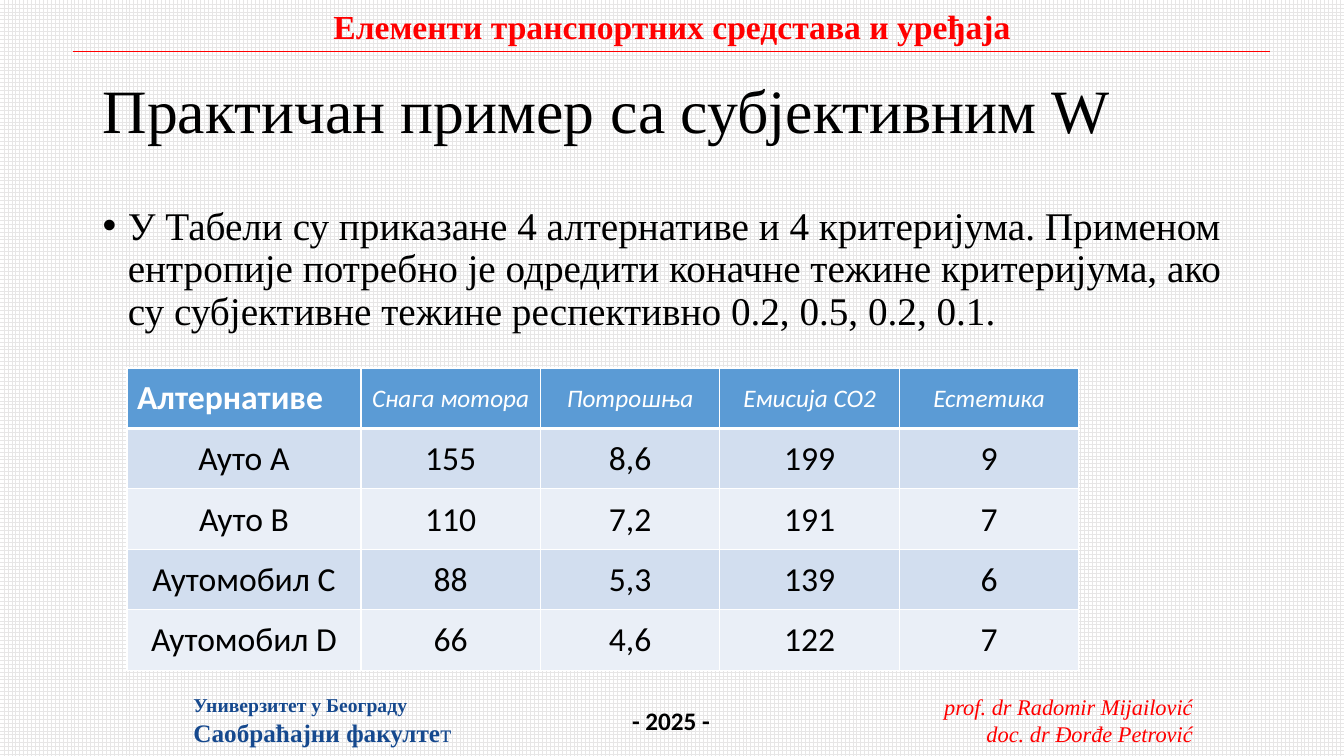
"""Build the slide on a practical weighting example with subjective W."""
from lxml import etree
from pptx import Presentation
from pptx.dml.color import RGBColor
from pptx.enum.dml import MSO_PATTERN
from pptx.enum.shapes import MSO_CONNECTOR
from pptx.enum.text import MSO_ANCHOR, PP_ALIGN
from pptx.oxml.ns import qn
from pptx.util import Inches, Pt

LEFT, CENTER, RIGHT = PP_ALIGN.LEFT, PP_ALIGN.CENTER, PP_ALIGN.RIGHT
TOP, MIDDLE = MSO_ANCHOR.TOP, MSO_ANCHOR.MIDDLE
GRID = MSO_PATTERN.LARGE_GRID
STRAIGHT = MSO_CONNECTOR.STRAIGHT
SERIF, SANS = "Times New Roman", "Calibri"
COLORS = {
    "red": "FF0000", "blue": "16498E", "black": "000000", "white": "FFFFFF",
    "grid": "E7E6E6", "header": "5B9BD5", "odd": "D2DEEF", "even": "EAEFF7",
}


def color(name):
    return RGBColor.from_string(COLORS[name])


def write(para, text, size=18, font=SERIF, ink="black", bold=False, italic=False, align=LEFT):
    para.alignment = align
    span = para.add_run()
    span.text = text
    span.font.size = Pt(size)
    span.font.name = font
    span.font.bold = bold
    span.font.italic = italic
    span.font.color.rgb = color(ink)


deck = Presentation()
deck.slide_width, deck.slide_height = Inches(13.33), Inches(7.5)
page = deck.slides.add_slide(deck.slide_layouts[6])
backdrop = page.background.fill
backdrop.patterned()
backdrop.pattern = GRID
backdrop.fore_color.rgb = color("grid")
backdrop.back_color.rgb = color("white")

rule = page.shapes.add_connector(STRAIGHT, Inches(0.72), Inches(0.51), Inches(12.6), Inches(0.51))
rule.line.color.rgb = color("red")
rule.line.width = Pt(0.5)
etree.SubElement(rule.element.spPr, qn("a:effectLst"))

author = dict(size=16, ink="red", italic=True, align=RIGHT)
school = dict(ink="blue", bold=True)
text_boxes = [
    ((9.22, 6.83, 2.71, 0.64), False, TOP, [
        [("prof. dr Radomir Mijailović", author)],
        [("doc. dr Đorđe Petrović", author)]]),
    ((3.17, 0.01, 6.99, 0.5), False, TOP, [
        [("Елементи транспортних средстава и уређаја",
          dict(size=24, ink="red", bold=True, align=CENTER))]]),
    ((6.17, 6.95, 0.98, 0.4), False, TOP, [[("- 2025 -", dict(font=SANS, bold=True))]]),
    ((1.82, 6.83, 2.79, 0.64), False, TOP, [
        [("Универзитет у Београду", dict(school, size=14))],
        [("Саобраћајни факулте", school), ("т", dict(ink="blue"))]]),
    ((0.92, 0.4, 11.5, 1.45), True, MIDDLE, [
        [("Практичан пример са субјективним W", dict(size=44))]]),
    ((0.92, 2, 11.5, 4.76), True, TOP, [
        [("У Табели су приказане 4 алтернативе и 4 критеријума. Применом ентропије "
          "потребно је одредити коначне тежине критеријума, ако су субјективне тежине "
          "респективно 0.2, 0.5, 0.2, 0.1.", dict(size=28))]]),
]
for place, wrap, anchor, paragraphs in text_boxes:
    box = page.shapes.add_textbox(*map(Inches, place))
    frame = box.text_frame
    frame.word_wrap = wrap
    frame.vertical_anchor = anchor
    for index, spans in enumerate(paragraphs):
        para = frame.add_paragraph() if index else frame.paragraphs[0]
        if wrap:
            para.line_spacing = 0.9
        for text, style in spans:
            write(para, text, **style)

bullet_format = para._p.get_or_add_pPr()
bullet_format.set("marL", str(Inches(0.25)))
bullet_format.set("indent", str(Inches(-0.25)))
etree.SubElement(bullet_format, qn("a:buFont"), typeface="Arial")
etree.SubElement(bullet_format, qn("a:buChar"), char="•")

rows = [
    ("Алтернативе", "Снага мотора", "Потрошња", "Емисија CO2", "Естетика"),
    ("Ауто A", "155", "8,6", "199", "9"),
    ("Ауто B", "110", "7,2", "191", "7"),
    ("Аутомобил C", "88", "5,3", "139", "6"),
    ("Аутомобил D", "66", "4,6", "122", "7"),
]
widths = [2.32] + [1.78] * 4
table = page.shapes.add_table(
    len(rows), len(widths), Inches(1.26), Inches(3.65), Inches(9.43), Inches(2.99)).table
for column, width in zip(table.columns, widths):
    column.width = Inches(width)
for row_index, values in enumerate(rows):
    table.rows[row_index].height = Inches(0.6)
    for column_index, value in enumerate(values):
        cell = table.cell(row_index, column_index)
        cell.vertical_anchor = MIDDLE
        corner = row_index == column_index == 0
        if not corner:
            cell.margin_left = cell.margin_top = cell.margin_right = Inches(0.01)
            cell.margin_bottom = 0
        thick_side = {0: "lnB", 1: "lnT"}.get(row_index)
        for side in ("lnL", "lnR", "lnT", "lnB"):
            border = etree.SubElement(
                cell._tc.get_or_add_tcPr(), qn("a:" + side), w=str(Pt(3 if side == thick_side else 1)))
            paint = etree.SubElement(border, qn("a:solidFill"))
            etree.SubElement(paint, qn("a:srgbClr"), val=COLORS["white"])
        header = row_index == 0
        cell.fill.solid()
        cell.fill.fore_color.rgb = color("header" if header else "odd" if row_index % 2 else "even")
        write(cell.text_frame.paragraphs[0], value, font=SANS,
              size=18 if header and not corner else 24,
              ink="white" if header else "black", bold=corner,
              italic=header and not corner, align=LEFT if corner else CENTER)

deck.save("out.pptx")
